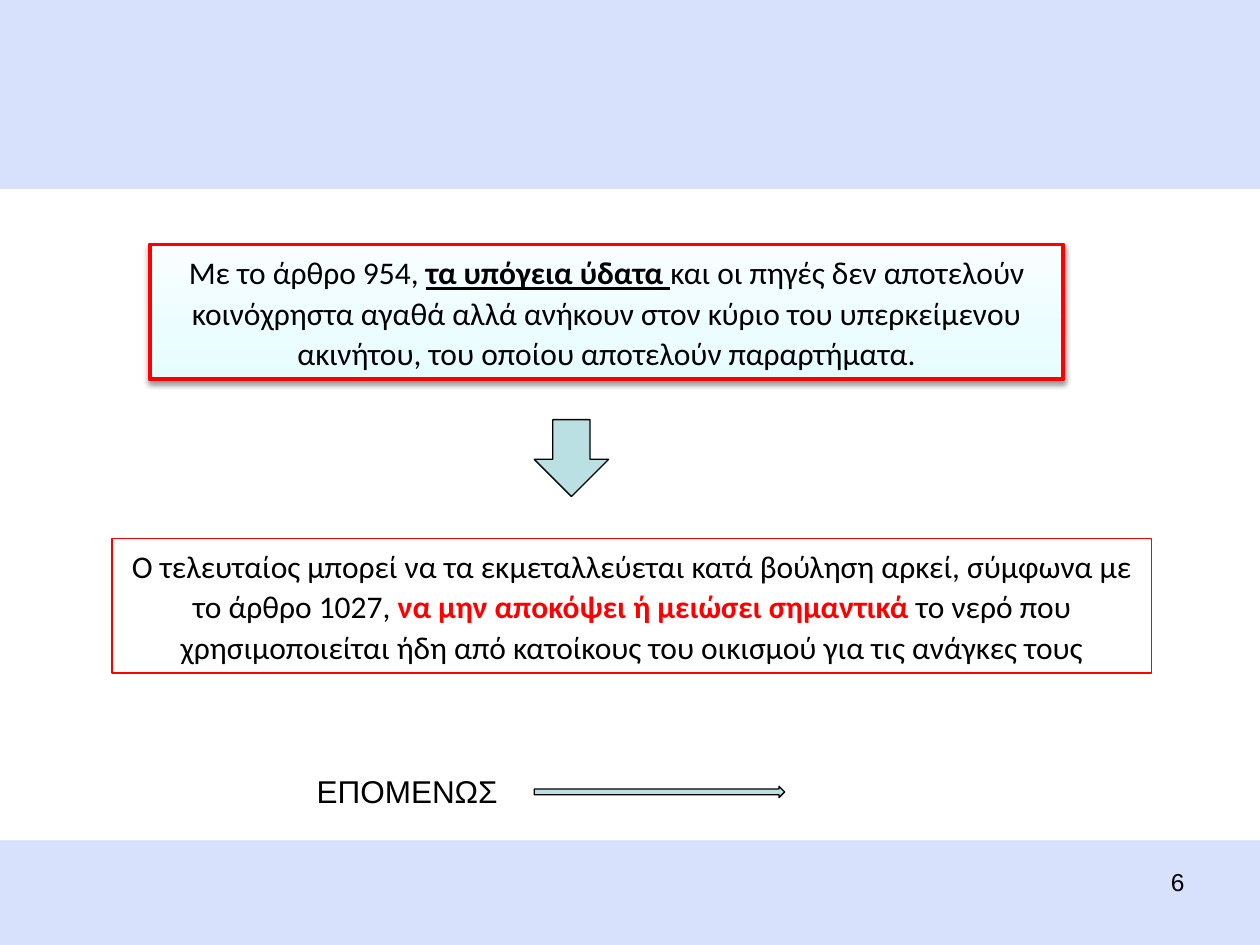
from pptx import Presentation
from pptx.util import Cm, Pt
from pptx.dml.color import RGBColor
from pptx.enum.shapes import MSO_SHAPE as SHAPE
from pptx.enum.text import PP_ALIGN as ALIGN, MSO_ANCHOR as ANCHOR, MSO_AUTO_SIZE as AUTO
from pptx.oxml import parse_xml
from pptx.oxml.ns import nsdecls

BLACK, RED, WHITE, TEAL = "000000", "FF0000", "FFFFFF", "BBE0E3"


def rgb(color):
    return RGBColor.from_string(color)


def add_text(sp, runs, size=18, font="Calibri", align=ALIGN.CENTER):
    """Fill a shape with runs of (text, colour, bold, underline)."""
    tf = sp.text_frame
    p = tf.paragraphs[0]
    p.alignment = align
    for text, color, bold, underline in runs:
        r = p.add_run()
        r.text = text
        r.font.name, r.font.size = font, Pt(size)
        r.font.bold, r.font.underline = bold, underline
        r.font.color.rgb = rgb(color)
    return tf


prs = Presentation()
prs.slide_width, prs.slide_height = Cm(25.4), Cm(19.05)
s = prs.slides.add_slide(prs.slide_layouts[6])

# Background and white band
s.background.fill.solid()
s.background.fill.fore_color.rgb = rgb("D8E1FC")
band = s.shapes.add_shape(SHAPE.RECTANGLE, 0, Cm(3.81), prs.slide_width, Cm(13.13))
band.shadow.inherit = False
band.fill.solid()
band.fill.fore_color.rgb = rgb(WHITE)
band.line.fill.background()

# Slide number
number = s.shapes.add_textbox(Cm(18.2), Cm(17.35), Cm(5.93), Cm(1.32))
number.text_frame.word_wrap = True
add_text(number, [("6", BLACK, False, False)], 14, "Arial", ALIGN.RIGHT)

# Framed statements: left, top, width, line width, runs
statements = [
    (3.02, 4.93, 18.42, 2.25, [
        ("Με το άρθρο 954, ", BLACK, False, False),
        ("τα υπόγεια ύδατα ", BLACK, True, True),
        ("και οι πηγές δεν αποτελούν κοινόχρηστα αγαθά αλλά ανήκουν στον κύριο του "
         "υπερκείμενου ακινήτου, του οποίου αποτελούν παραρτήματα.", BLACK, False, False)]),
    (2.26, 10.85, 20.96, 0.75, [
        ("Ο τελευταίος μπορεί να τα εκμεταλλεύεται κατά βούληση αρκεί, σύμφωνα με "
         "το άρθρο 1027, ", BLACK, False, False),
        ("να μην αποκόψει ή μειώσει σημαντικά", RED, True, False),
        (" το νερό που χρησιμοποιείται ήδη από κατοίκους του οικισμού για τις "
         "ανάγκες τους", BLACK, False, False)]),
]
boxes = []
for left, top, width, line, runs in statements:
    sp = s.shapes.add_shape(SHAPE.RECTANGLE, Cm(left), Cm(top), Cm(width), Cm(2.72))
    sp.shadow.inherit = False
    sp.fill.background()
    sp.line.color.rgb = rgb(RED)
    sp.line.width = Pt(line)
    tf = add_text(sp, runs)
    tf.word_wrap = True
    tf.auto_size = AUTO.SHAPE_TO_FIT_TEXT
    tf.vertical_anchor = ANCHOR.TOP
    tf.paragraphs[0].line_spacing = 1.07
    tf.paragraphs[0].space_after = Pt(8)
    boxes.append(sp)

# Gradient and soft shadow of the first statement
article = boxes[0]
article.fill.gradient()
article.fill.gradient_angle = 90
stops = article.fill.gradient_stops
for stop, color, position in zip(stops, ("E6FDFF", "F8FEFF"), (0, 1)):
    stop.color.rgb = rgb(color)
    stop.position = position
spPr = article.element.spPr
spPr.find(".//{*}gsLst").insert(1, parse_xml(
    f'<a:gs {nsdecls("a")} pos="35000"><a:srgbClr val="ECFDFF"/></a:gs>'))
spPr.find("{*}effectLst").append(parse_xml(
    f'<a:outerShdw {nsdecls("a")} blurRad="{Pt(3.1)}" dist="{Pt(1.6)}" dir="5400000" '
    'rotWithShape="0"><a:srgbClr val="000000"><a:alpha val="38000"/></a:srgbClr></a:outerShdw>'))

# Block arrows
for kind, left, top, width, height in (
        (SHAPE.DOWN_ARROW, 10.77, 8.46, 1.5, 1.55),
        (SHAPE.RIGHT_ARROW, 10.77, 15.85, 5.05, 0.23)):
    arrow = s.shapes.add_shape(kind, Cm(left), Cm(top), Cm(width), Cm(height))
    arrow.shadow.inherit = False
    arrow.fill.solid()
    arrow.fill.fore_color.rgb = rgb(TEAL)
    arrow.line.color.rgb = rgb(BLACK)
    arrow.line.width = Pt(0.75)

# Conclusion label
label = s.shapes.add_textbox(Cm(6.1), Cm(15.44), Cm(4.22), Cm(1.02))
tf = add_text(label, [("ΕΠΟΜΕΝΩΣ", BLACK, False, False)], font="Arial")
tf.word_wrap = False
tf.auto_size = AUTO.SHAPE_TO_FIT_TEXT

prs.save("out.pptx")
